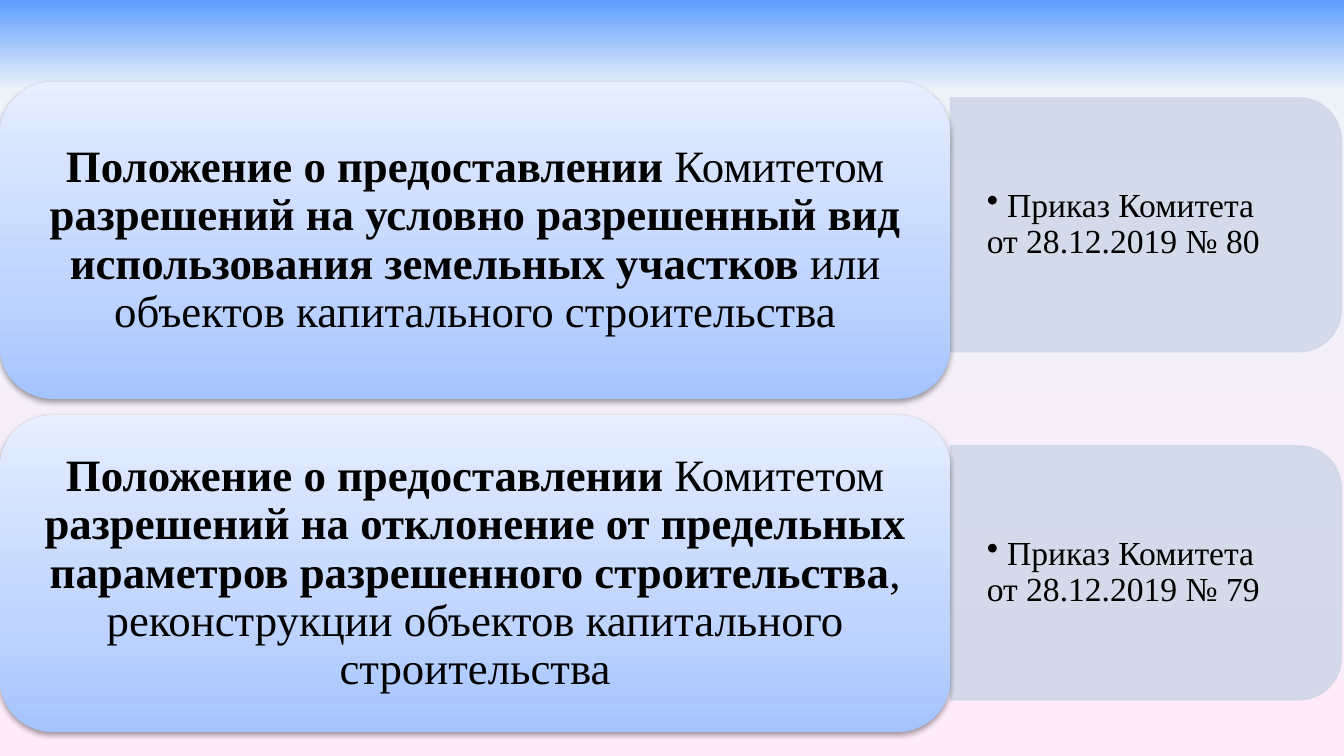
from dataclasses import dataclass

from lxml.etree import SubElement
from pptx import Presentation
from pptx.dml.color import RGBColor
from pptx.enum.shapes import MSO_SHAPE
from pptx.enum.text import MSO_ANCHOR, PP_ALIGN
from pptx.oxml.ns import qn
from pptx.util import Cm, Pt


@dataclass(frozen=True)
class Theme:
    font: str = "Times New Roman"
    card_size: int = 24
    tab_size: int = 18
    ink: str = "000000"
    tab: str = "D0D8E8"
    tab_opacity: int = 90
    shadow_opacity: int = 38
    # Stops are (position %, colour, opacity %)
    sky: tuple = ((0, "5E9EFF", 100), (12, "EDF3F9", 33), (100, "FFEBFA", 100))
    card: tuple = ((0, "A4C4FF", 100), (35, "BFD4FF", 100), (100, "E6EEFF", 100))


def add_alpha(colour, percent):
    SubElement(colour, qn("a:alpha"), val=str(percent * 1000))


def apply_gradient(fill, owner, stops, angle):
    """Fill with any number of stops; the angle runs counter-clockwise."""
    fill.gradient()
    fill.gradient_angle = angle
    stop_list = next(owner.iter(qn("a:gsLst")))
    for old_stop in list(stop_list):
        stop_list.remove(old_stop)
    for position, value, opacity in stops:
        stop = SubElement(stop_list, qn("a:gs"), pos=str(position * 1000))
        colour = SubElement(stop, qn("a:srgbClr"), val=value)
        if opacity < 100:
            add_alpha(colour, opacity)


class SlideBuilder:
    def __init__(self, page, theme):
        self.page = page
        self.theme = theme

    def background(self):
        fill = self.page.background.fill
        apply_gradient(fill, self.page.element, self.theme.sky, 270)

    def span(self, para, text, size, bold=False):
        span = para.add_run()
        span.text = text
        span.font.name = self.theme.font
        span.font.size = Pt(size)
        span.font.bold = bold
        span.font.color.rgb = RGBColor.from_string(self.theme.ink)

    def paragraph(self, box, align):
        frame = box.text_frame
        frame.word_wrap = True
        frame.vertical_anchor = MSO_ANCHOR.MIDDLE
        para = frame.paragraphs[0]
        para.alignment = align
        para.line_spacing = 0.9
        return para

    def tab(self, left, middle, width, height):
        """Panel rounded on the right: a top-rounded shape turned by 90 degrees."""
        panel = self.page.shapes.add_shape(
            MSO_SHAPE.ROUND_2_SAME_RECTANGLE,
            Cm(left + (width - height) / 2), Cm(middle - width / 2),
            Cm(height), Cm(width))
        panel.rotation = 90
        panel.shadow.inherit = False
        colour = RGBColor.from_string(self.theme.tab)
        for fill in (panel.fill, panel.line.fill):
            fill.solid()
            fill.fore_color.rgb = colour
        panel.line.width = Pt(0.75)
        for node in panel.element.spPr.iter(qn("a:srgbClr")):
            add_alpha(node, self.theme.tab_opacity)

    def tab_text(self, left, middle, width, height, lines):
        box = self.page.shapes.add_textbox(
            Cm(left), Cm(middle - height / 2), Cm(width), Cm(height))
        frame = box.text_frame
        frame.margin_left = frame.margin_right = Cm(0.69)
        frame.margin_top = frame.margin_bottom = Cm(0.35)
        para = self.paragraph(box, PP_ALIGN.LEFT)
        para.level = 1
        properties = para._p.get_or_add_pPr()
        properties.set("marL", "0")
        properties.set("indent", "0")
        SubElement(properties, qn("a:buChar"), char="•")
        for index, line in enumerate(lines):
            if index:
                para.add_line_break()
            self.span(para, line, self.theme.tab_size)

    def card(self, left, top, width, height, spans):
        box = self.page.shapes.add_shape(
            MSO_SHAPE.ROUNDED_RECTANGLE, Cm(left), Cm(top), Cm(width), Cm(height))
        properties = box.element.spPr
        apply_gradient(box.fill, properties, self.theme.card, 90)
        box.line.fill.background()
        box.shadow.inherit = False
        shadow = SubElement(
            properties.find(qn("a:effectLst")), qn("a:outerShdw"),
            blurRad=str(Pt(3.1)), dist=str(Pt(1.6)), dir="5400000", rotWithShape="0")
        colour = SubElement(shadow, qn("a:srgbClr"), val=self.theme.ink)
        add_alpha(colour, self.theme.shadow_opacity)
        para = self.paragraph(box, PP_ALIGN.CENTER)
        for text, bold in spans:
            self.span(para, text, self.theme.card_size, bold)


REGULATIONS = [
    ("80", [
        ("разрешений на условно разрешенный вид использования земельных участков ", True),
        ("или объектов капитального строительства", False),
    ]),
    ("79", [
        ("разрешений на отклонение от предельных параметров разрешенного строительства", True),
        (", реконструкции объектов капитального строительства", False),
    ]),
]
OPENING = [("Положение о предоставлении ", True), ("Комитетом ", False)]
CARD_WIDTH, CARD_HEIGHT = 17.96, 5.99
CARD_TOP, CARD_STEP = 1.55, 6.3
TAB_MIDDLE, TAB_STEP = 4.25, 6.58


def main():
    deck = Presentation()
    deck.slide_width, deck.slide_height = Cm(25.4), Cm(14.29)
    page = deck.slides.add_slide(deck.slide_layouts[6])
    builder = SlideBuilder(page, Theme())
    builder.background()
    for row, (number, subject) in enumerate(REGULATIONS):
        middle = TAB_MIDDLE + row * TAB_STEP
        order = [" Приказ Комитета ", f"от 28.12.2019 № {number}"]
        builder.tab(CARD_WIDTH, middle, 7.39, 4.8)
        builder.tab_text(CARD_WIDTH, middle, 7.14, 4.32, order)
        builder.card(0, CARD_TOP + row * CARD_STEP, CARD_WIDTH, CARD_HEIGHT,
                     OPENING + subject)
    deck.save("out.pptx")


if __name__ == "__main__":
    main()
